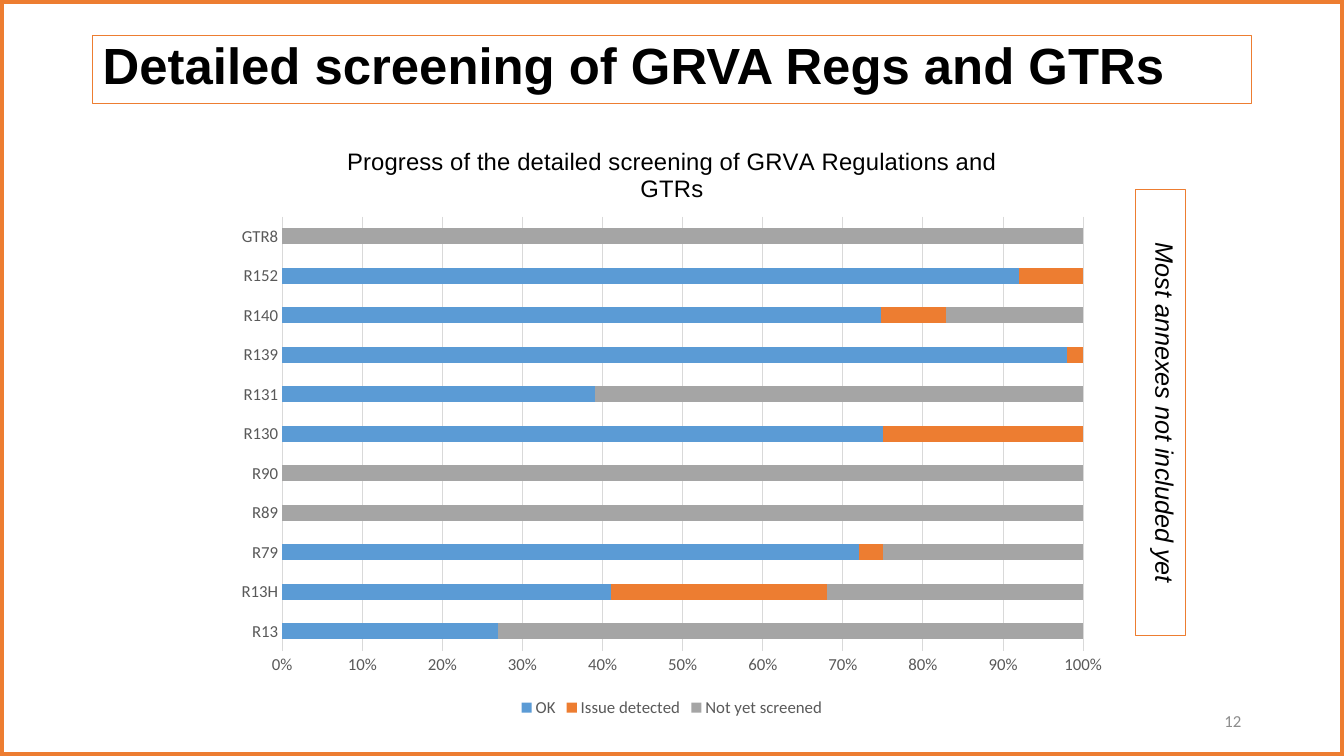
import pptx
import pptx.chart.data
import pptx.dml.color
import pptx.enum.chart
import pptx.enum.shapes
import pptx.enum.text
import pptx.oxml
import pptx.oxml.ns
import pptx.util

RGBColor = pptx.dml.color.RGBColor
Inches, Pt = pptx.util.Inches, pptx.util.Pt
PP_ALIGN = pptx.enum.text.PP_ALIGN
XL = pptx.enum.chart

BLACK = RGBColor(0x00, 0x00, 0x00)
BLUE = RGBColor(0x5B, 0x9B, 0xD5)
ORANGE = RGBColor(0xED, 0x7D, 0x31)
GREY = RGBColor(0xA5, 0xA5, 0xA5)
AXIS_TEXT = RGBColor(0x59, 0x59, 0x59)
GRID_LINE = RGBColor(0xD9, 0xD9, 0xD9)
NUMBER_GREY = RGBColor(0x8C, 0x8C, 0x8C)

WIDTH, HEIGHT = 13.33, 7.5

REGULATIONS = ["R13", "R13H", "R79", "R89", "R90", "R130",
               "R131", "R139", "R140", "R152", "GTR8"]
STATUSES = [
    ("OK", BLUE, [27, 41, 72, 0, 0, 75, 39, 98, 74, 92, 0]),
    ("Issue detected", ORANGE, [0, 27, 3, 0, 0, 25, 0, 2, 8, 8, 0]),
    ("Not yet screened", GREY, [73, 32, 25, 100, 100, 0, 61, 0, 17, 0, 100]),
]


def style_font(font, size, color, name="Calibri", bold=False, italic=False):
    font.size, font.name = Pt(size), name
    font.bold, font.italic = bold, italic
    font.color.rgb = color


def write(frame, text, align=PP_ALIGN.LEFT, spacing=1.0,
          anchor=pptx.enum.text.MSO_ANCHOR.MIDDLE, **font_format):
    frame.word_wrap = True
    frame.vertical_anchor = anchor
    paragraph = frame.paragraphs[0]
    paragraph.alignment, paragraph.line_spacing = align, spacing
    run = paragraph.add_run()
    run.text = text
    style_font(run.font, **font_format)


def add_outline(slide, box, weight):
    """Add an unfilled orange rectangle."""
    outline = slide.shapes.add_shape(
        pptx.enum.shapes.MSO_SHAPE.RECTANGLE, *map(Inches, box))
    outline.shadow.inherit = False
    outline.fill.background()
    outline.line.color.rgb = ORANGE
    outline.line.width = Pt(weight)
    return outline


def add_heading(slide, box):
    heading = add_outline(slide, box, 0.75)
    write(heading.text_frame, "Detailed screening of GRVA Regs and GTRs",
          spacing=0.8, size=36.3, color=BLACK, name="Arial", bold=True)


def add_side_note(slide, box):
    """Add the boxed remark that reads from top to bottom."""
    note = add_outline(slide, box, 0.75)
    write(note.text_frame, "Most annexes not included yet",
          align=PP_ALIGN.CENTER, anchor=pptx.enum.text.MSO_ANCHOR.TOP,
          size=18, color=BLACK, name="Arial", italic=True)
    note.text_frame._txBody.bodyPr.set("vert", "vert")


def add_page_number(slide, box):
    number = slide.shapes.add_textbox(*map(Inches, box))
    write(number.text_frame, "12", align=PP_ALIGN.RIGHT,
          size=12, color=NUMBER_GREY)


def place_plot(chart, **shares):
    """Fix the inner plot area at shares of the chart's size."""
    plot_area = chart._chartSpace.chart.plotArea
    for layout in plot_area.findall(pptx.oxml.ns.qn("c:layout")):
        plot_area.remove(layout)
    modes = '<c:xMode val="edge"/><c:yMode val="edge"/>'
    sizes = "".join(f'<c:{key} val="{share}"/>' for key, share in shares.items())
    plot_area.insert(0, pptx.oxml.parse_xml(
        f'<c:layout {pptx.oxml.ns.nsdecls("c")}><c:manualLayout>'
        f'<c:layoutTarget val="inner"/>{modes}{sizes}'
        '</c:manualLayout></c:layout>'))


def style_axis(axis):
    axis.major_tick_mark = axis.minor_tick_mark = XL.XL_TICK_MARK.NONE
    style_font(axis.tick_labels.font, 12, AXIS_TEXT)


def add_progress_chart(slide, box):
    data = pptx.chart.data.CategoryChartData()
    data.categories = REGULATIONS
    for status, _, shares in STATUSES:
        data.add_series(status, shares)
    chart = slide.shapes.add_chart(
        XL.XL_CHART_TYPE.BAR_STACKED_100, *map(Inches, box), data).chart
    style_font(chart.font, 10, BLACK)

    write(chart.chart_title.text_frame,
          "Progress of the detailed screening of GRVA Regulations and GTRs",
          align=PP_ALIGN.CENTER, size=17, color=BLACK, name="Arial")
    chart.chart_title.include_in_layout = False

    plot = chart.plots[0]
    plot.gap_width, plot.overlap = 150, 100
    plot.vary_by_categories = False
    for series, (_, color, _) in zip(plot.series, STATUSES):
        series.format.fill.solid()
        series.format.fill.fore_color.rgb = color

    regulations, percent = chart.category_axis, chart.value_axis
    style_axis(regulations)
    style_axis(percent)
    percent.minimum_scale, percent.maximum_scale, percent.major_unit = 0, 1, 0.1
    percent.tick_labels.number_format = "0%"
    percent.tick_labels.number_format_is_linked = False
    percent.format.line.fill.background()
    for line in (regulations.format.line, percent.major_gridlines.format.line):
        line.color.rgb = GRID_LINE
        line.width = Pt(0.75)

    chart.has_legend = True
    chart.legend.position = XL.XL_LEGEND_POSITION.BOTTOM
    chart.legend.include_in_layout = False
    style_font(chart.legend.font, 12, AXIS_TEXT)
    place_plot(chart, x=0.065, y=0.155, w=0.894, h=0.727)


def main():
    deck = pptx.Presentation()
    deck.slide_width, deck.slide_height = Inches(WIDTH), Inches(HEIGHT)
    slide = deck.slides.add_slide(deck.slide_layouts[6])
    margin = 0.92
    add_heading(slide, (margin, 0.35, WIDTH - 2 * margin, 0.68))
    add_page_number(slide, (WIDTH - margin - 3, 6.95, 3, 0.4))
    add_progress_chart(slide, (WIDTH / 6, 1.23, WIDTH * 2 / 3, 5.93))
    add_outline(slide, (0, 0, WIDTH, HEIGHT), 6)
    add_side_note(slide, (11.26, 1.88, 0.5, 4.43))
    deck.save("out.pptx")


if __name__ == "__main__":
    main()
